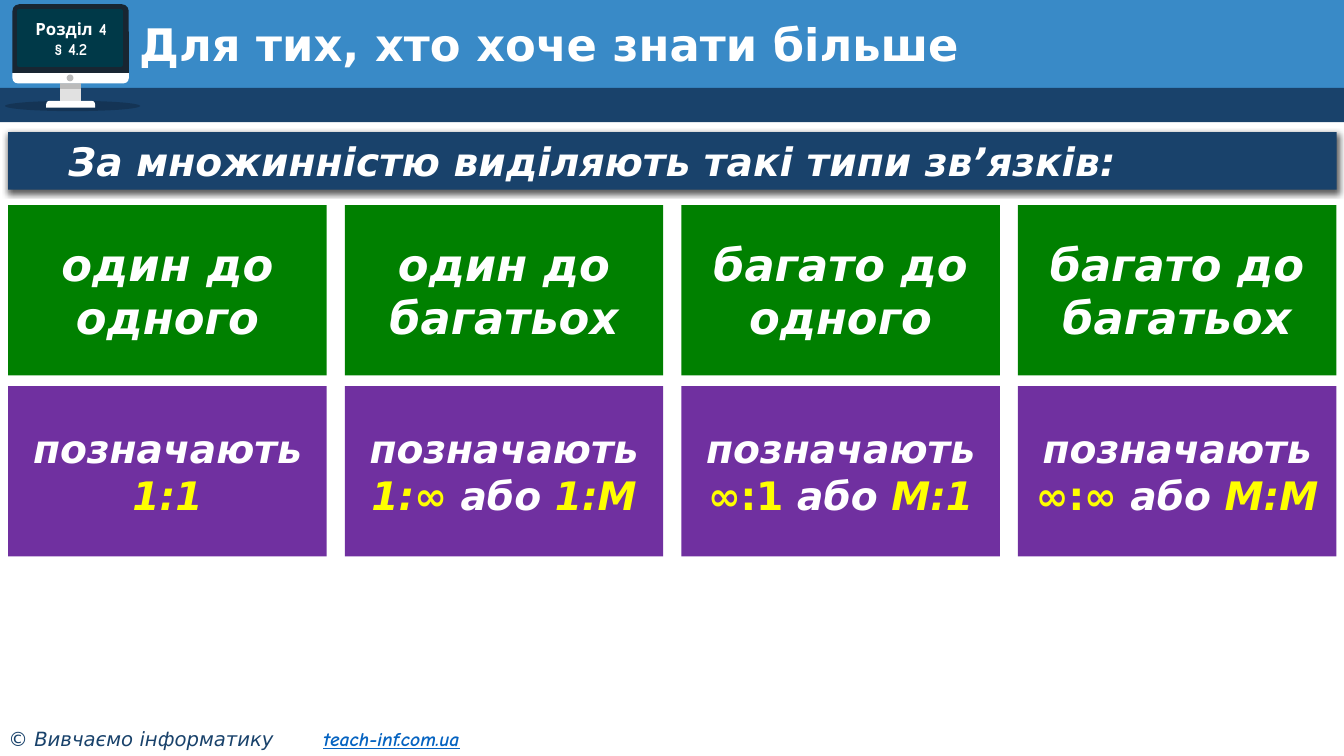
from lxml import etree
from pptx import Presentation
from pptx.dml.color import RGBColor
from pptx.enum.shapes import MSO_SHAPE
from pptx.enum.text import MSO_ANCHOR, MSO_AUTO_SIZE, PP_ALIGN
from pptx.oxml.ns import qn
from pptx.util import Pt

RECT = MSO_SHAPE.RECTANGLE
OVAL = MSO_SHAPE.OVAL
ROUNDED = MSO_SHAPE.ROUNDED_RECTANGLE
ROUNDED_ENDS = MSO_SHAPE.ROUND_2_SAME_RECTANGLE
TOP, MIDDLE = MSO_ANCHOR.TOP, MSO_ANCHOR.MIDDLE
NO_AUTOFIT = MSO_AUTO_SIZE.NONE
LEFT, CENTER, JUSTIFY = PP_ALIGN.LEFT, PP_ALIGN.CENTER, PP_ALIGN.JUSTIFY

BLACK = RGBColor(0x00, 0x00, 0x00)
WHITE = RGBColor(0xFF, 0xFF, 0xFF)
SKY = RGBColor(0x39, 0x8A, 0xC7)
NAVY = RGBColor(0x19, 0x42, 0x6B)
BEZEL = RGBColor(0x18, 0x26, 0x32)
SCREEN = RGBColor(0x00, 0x39, 0x48)
LIGHT_GREY = RGBColor(0xE1, 0xE1, 0xE1)
GREY = RGBColor(0xBB, 0xBB, 0xBB)
GREEN = RGBColor(0x00, 0x80, 0x00)
PURPLE = RGBColor(0x70, 0x30, 0xA0)
YELLOW = RGBColor(0xFF, 0xFF, 0x00)
LINK_BLUE = RGBColor(0x05, 0x63, 0xC1)

MAIN_FONT = "DejaVu Sans"
COMIC_FONT = "Comic Neue"

# Card grid
GRID_LEFT, COLUMN_STEP = 5.9, 240.4
CARD_WIDTH, CARD_HEIGHT = 227.5, 121.6
NAME_TOP, NOTATION_TOP = 146.5, 275.8

# Each relation: its name and the notation as (text, highlighted, italic)
OR = (" або ", False, True)
RELATIONS = [
    ("один до одного", [("1:1", True, True)]),
    ("один до багатьох",
     [("1:", True, True), ("∞", True, False), OR, ("1:М", True, True)]),
    ("багато до одного", [("∞:1", True, False), OR, ("М:1", True, True)]),
    ("багато до багатьох", [("∞:∞", True, False), OR, ("М:М", True, True)]),
]


def add_block(slide, kind, left, top, width, height, color, adjustments=()):
    block = slide.shapes.add_shape(kind, Pt(left), Pt(top), Pt(width), Pt(height))
    block.shadow.inherit = False
    block.fill.solid()
    block.fill.fore_color.rgb = color
    block.line.fill.background()
    for index, value in enumerate(adjustments):
        block.adjustments[index] = value
    return block


def add_text_box(slide, left, top, width, height, anchor):
    box = slide.shapes.add_textbox(Pt(left), Pt(top), Pt(width), Pt(height))
    box.text_frame.word_wrap = True
    box.text_frame.vertical_anchor = anchor
    return box.text_frame


def style_para(para, size, color, align, font=MAIN_FONT, bold=True, italic=True):
    para.alignment = align
    para.font.name = font
    para.font.size = Pt(size)
    para.font.color.rgb = color
    para.font.bold = bold
    para.font.italic = italic


def add_span(para, text):
    span = para.add_run()
    span.text = text
    return span


def set_transparency(block, opacity):
    color = block.fill._xPr.find(qn("a:solidFill"))[0]
    etree.SubElement(color, qn("a:alpha"), val=str(opacity * 1000))


def add_drop_shadow(block):
    effects = block.element.spPr.find(qn("a:effectLst"))
    shadow = etree.SubElement(
        effects, qn("a:outerShdw"), blurRad=str(Pt(4.5)), dist=str(Pt(1.5)),
        dir="5400000", algn="t", rotWithShape="0")
    color = etree.SubElement(shadow, qn("a:srgbClr"), val=str(BLACK))
    etree.SubElement(color, qn("a:alpha"), val="63000")


def add_monitor(slide):
    ground = add_block(slide, OVAL, 3.6, 72, 96.5, 7.4, BLACK)
    set_transparency(ground, 20)
    for kind, left, top, width, height, color, adjustments in [
        (ROUNDED_ENDS, 8.9, 3, 83.1, 49.4, BEZEL, (0.1, 0)),
        (ROUNDED_ENDS, 8.9, 52.2, 83.1, 7.3, WHITE, (0, 0.5)),
        (RECT, 43, 59.5, 14.9, 12.5, LIGHT_GREY, ()),
        (RECT, 43, 59.5, 14.9, 4, GREY, ()),
        (ROUNDED_ENDS, 33, 72, 34.9, 5, WHITE, (0.5, 0)),
        (OVAL, 47.6, 53.2, 4.9, 4.9, GREY, ()),
        (ROUNDED, 12.2, 6.5, 75.6, 41.3, SCREEN, (0.036,)),
    ]:
        add_block(slide, kind, left, top, width, height, color, adjustments)
    frame = add_text_box(slide, 9.4, 6.5, 82.8, 42.5, MIDDLE)
    frame.text = "Розділ 4\n§ 4.2"
    for para in frame.paragraphs:
        style_para(para, 12, WHITE, CENTER, COMIC_FONT, italic=False)


def add_footer(slide):
    frame = add_text_box(slide, 0, 515.5, 375, 24.5, TOP)
    frame.margin_left = Pt(6)
    para = frame.paragraphs[0]
    tabs = etree.SubElement(para._p.get_or_add_pPr(), qn("a:tabLst"))
    etree.SubElement(tabs, qn("a:tab"), pos=str(Pt(225)), algn="l")
    style_para(para, 14, NAVY, LEFT, bold=False)
    add_span(para, "© Вивчаємо інформатику\t")
    site = add_span(para, "teach-inf.com.ua")
    site.font.name = COMIC_FONT
    site.font.color.rgb = LINK_BLUE
    site.font.bold = True
    site.font.underline = True


def add_title(slide, text):
    title = slide.shapes.title
    title.left, title.top, title.width, title.height = Pt(92.2), Pt(13), Pt(843.8), Pt(41.8)
    # Bring the title in front of the header bars
    slide.shapes.element.append(title.element)
    frame = title.text_frame
    frame.text = text
    frame.word_wrap = True
    frame.auto_size = NO_AUTOFIT
    frame.vertical_anchor = MIDDLE
    para = frame.paragraphs[0]
    para.line_spacing = 0.9
    style_para(para, 32, WHITE, LEFT, italic=False)


def add_banner(slide, text):
    banner = add_block(slide, RECT, 5.8, 94.3, 949, 41.2, NAVY)
    add_drop_shadow(banner)
    frame = banner.text_frame
    frame.word_wrap = True
    frame.vertical_anchor = TOP
    para = frame.paragraphs[0]
    add_span(para, text)
    para._p.get_or_add_pPr().set("indent", str(Pt(36)))
    style_para(para, 28, WHITE, JUSTIFY)


def add_card(slide, column, top, color, size, text):
    card = add_block(slide, RECT, GRID_LEFT + column * COLUMN_STEP, top,
                     CARD_WIDTH, CARD_HEIGHT, color)
    card.text_frame.word_wrap = True
    card.text_frame.vertical_anchor = MIDDLE
    para = card.text_frame.paragraphs[0]
    style_para(para, size, WHITE, CENTER)
    add_span(para, text)
    return para


def add_notation(para, parts):
    for text, highlighted, italic in parts:
        span = add_span(para, text)
        if highlighted:
            span.font.color.rgb = YELLOW
        if not italic:
            span.font.italic = False


def main():
    deck = Presentation()
    deck.slide_width, deck.slide_height = Pt(960), Pt(540)
    slide = deck.slides.add_slide(deck.slide_layouts[5])

    # Header and footer
    add_block(slide, RECT, 0, 0, 960, 65.5, SKY)
    add_block(slide, RECT, 0, 62.8, 960, 24.5, NAVY)
    add_monitor(slide)
    add_footer(slide)
    add_title(slide, "Для тих, хто хоче знати більше")

    # Relation types
    add_banner(slide, "За множинністю виділяють такі типи зв’язків:")
    for column, (name, notation) in enumerate(RELATIONS):
        add_card(slide, column, NAME_TOP, GREEN, 32, name)
        para = add_card(slide, column, NOTATION_TOP, PURPLE, 28, "позначають ")
        add_notation(para, notation)

    deck.save("out.pptx")


if __name__ == "__main__":
    main()
